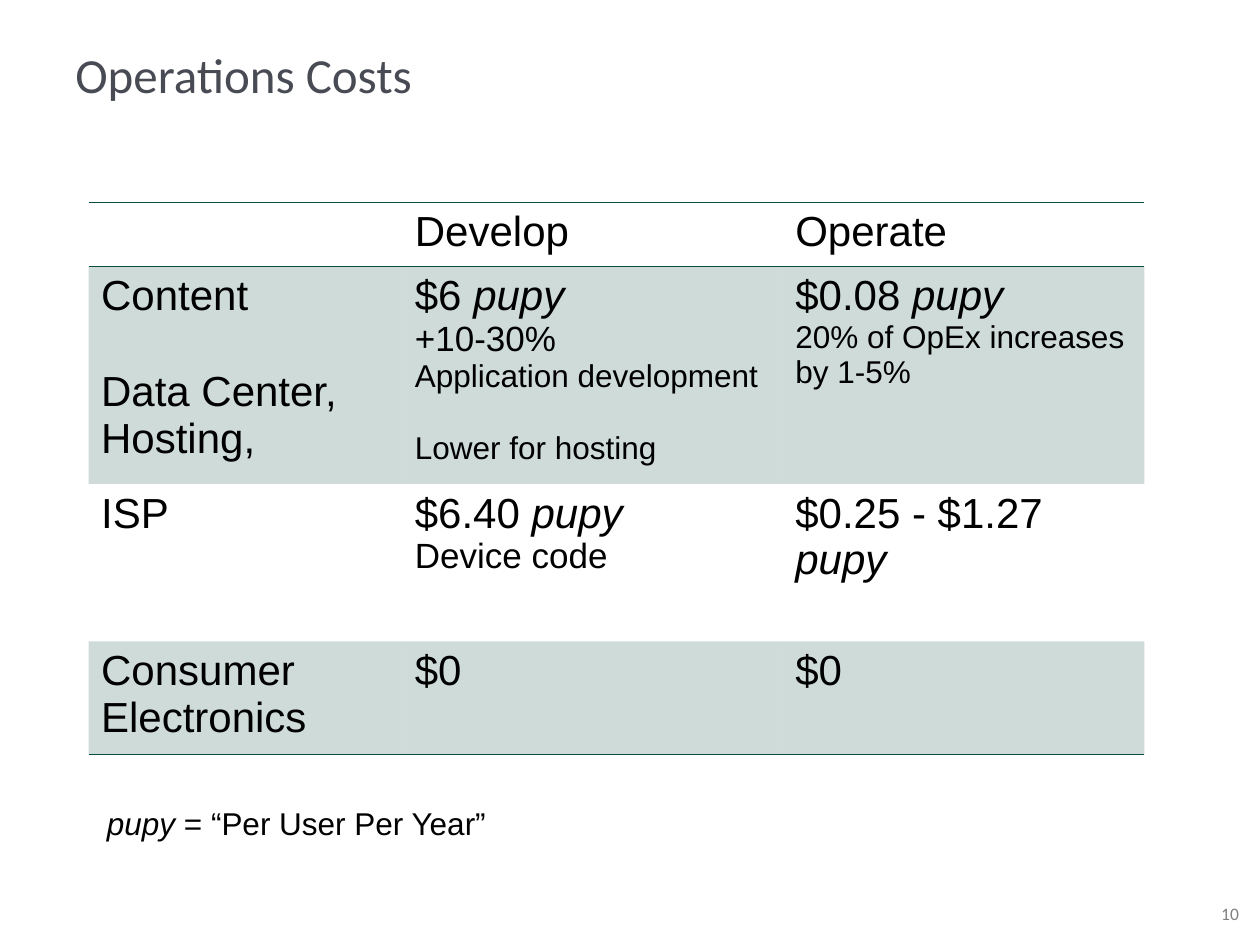
from pptx import Presentation
from pptx.dml.color import RGBColor
from pptx.enum.text import MSO_ANCHOR, PP_ALIGN
from pptx.oxml import parse_xml
from pptx.oxml.ns import nsdecls, qn
from pptx.util import Pt

BLACK = RGBColor(0x00, 0x00, 0x00)
GREEN = RGBColor(0x0B, 0x4D, 0x40)
SLATE = RGBColor(0x48, 0x4B, 0x54)
GRAY = RGBColor(0x80, 0x80, 0x80)
PLAIN_TABLE_STYLE = "{2D5ABB26-0587-4C30-8999-92F81FD0307C}"

COLUMN_WIDTHS = [179.3, 217.4, 206.6]
ROW_HEIGHTS = [36.5, 121, 90, 64]
PUPY = ("pupy", True)

# A cell is a list of paragraphs: (runs, size, space before).
COST_ROWS = [
    [[], [("Develop", 24, 0)], [("Operate", 24, 0)]],
    [
        [("Content", 24, 0), ("Data Center, Hosting,", 24, 28)],
        [(["$6 ", PUPY], 24, 0), ("+10-30%", 20, 0),
         ("Application development", 18, 0), ("Lower for hosting", 18, 21)],
        [(["$0.08 ", PUPY], 24, 0), ("20% of OpEx increases by 1-5%", 18, 0)],
    ],
    [
        [("ISP", 24, 0)],
        [(["$6.40 ", PUPY], 24, 0), ("Device code", 20, 0)],
        [(["$0.25 - $1.27 ", PUPY], 24, 0)],
    ],
    [[("Consumer Electronics", 24, 0)], [("$0", 24, 0)], [("$0", 24, 0)]],
]


def write_text(paragraph, text, size=24, font="Arial", color=BLACK,
               align=PP_ALIGN.LEFT, space_before=0):
    """Write a string, or a list of strings and (string, italic) pairs."""
    paragraph.alignment = align
    if space_before:
        paragraph.space_before = Pt(space_before)
    for part in [text] if isinstance(text, str) else text:
        words, italic = (part, False) if isinstance(part, str) else part
        run = paragraph.add_run()
        run.text = words
        run.font.size = Pt(size)
        run.font.name = font
        run.font.italic = italic
        run.font.color.rgb = color


class SlideBuilder:
    def __init__(self, presentation):
        self.slide = presentation.slides.add_slide(presentation.slide_layouts[6])
        self.rule_color = GREEN
        self.band_color = GREEN
        self.band_opacity = 20

    def text_box(self, left, top, width, height, text, wrap=True,
                 anchor=MSO_ANCHOR.TOP, **text_format):
        shape = self.slide.shapes.add_textbox(
            Pt(left), Pt(top), Pt(width), Pt(height))
        shape.text_frame.word_wrap = wrap
        shape.text_frame.vertical_anchor = anchor
        write_text(shape.text_frame.paragraphs[0], text, **text_format)

    def rule(self, cell, side):
        """Draw a thin line on the top (T) or bottom (B) of a cell."""
        cell._tc.get_or_add_tcPr().append(parse_xml(
            f'<a:ln{side} {nsdecls("a")} w="12700"><a:solidFill>'
            f'<a:srgbClr val="{self.rule_color}"/></a:solidFill></a:ln{side}>'))

    def band(self, cell):
        """Fill a cell with the translucent band colour."""
        cell.fill.solid()
        cell.fill.fore_color.rgb = self.band_color
        color = cell._tc.tcPr.find(qn("a:solidFill"))[0]
        color.append(parse_xml(
            f'<a:alpha {nsdecls("a")} val="{self.band_opacity * 1000}"/>'))

    def table(self, left, top, column_widths, row_heights, rows):
        frame = self.slide.shapes.add_table(
            len(rows), len(column_widths), Pt(left), Pt(top),
            Pt(sum(column_widths)), Pt(sum(row_heights)))
        table = frame.table
        table.first_row = table.horz_banding = False
        table._tbl.tblPr.find(qn("a:tableStyleId")).text = PLAIN_TABLE_STYLE
        for column, width in zip(table.columns, column_widths):
            column.width = Pt(width)
        for row, height in zip(table.rows, row_heights):
            row.height = Pt(height)
        for row_index, row in enumerate(rows):
            for column_index, paragraphs in enumerate(row):
                cell = table.cell(row_index, column_index)
                if row_index == 0:
                    self.rule(cell, "T")
                if row_index in (0, len(rows) - 1):
                    self.rule(cell, "B")
                if row_index % 2:
                    self.band(cell)
                else:
                    cell.fill.background()
                self.fill_cell(cell, paragraphs)

    def fill_cell(self, cell, paragraphs):
        frame = cell.text_frame
        for index, (text, size, space_before) in enumerate(paragraphs):
            paragraph = frame.add_paragraph() if index else frame.paragraphs[0]
            write_text(paragraph, text, size=size, space_before=space_before)


def main():
    presentation = Presentation()
    presentation.slide_width = Pt(720)
    presentation.slide_height = Pt(540)
    builder = SlideBuilder(presentation)
    builder.text_box(36, 21.6, 594.7, 90, "Operations Costs",
                     size=28, font="Calibri", color=SLATE)
    builder.text_box(547.2, 507.6, 167.8, 28.8, "10", anchor=MSO_ANCHOR.MIDDLE,
                     size=10, font="Calibri", color=GRAY, align=PP_ALIGN.RIGHT)
    builder.table(50.6, 115.7, COLUMN_WIDTHS, ROW_HEIGHTS, COST_ROWS)
    builder.text_box(54, 455.8, 236.9, 28.8, [PUPY, " = “Per User Per Year”"],
                     wrap=False, size=18)
    presentation.save("out.pptx")


if __name__ == "__main__":
    main()
